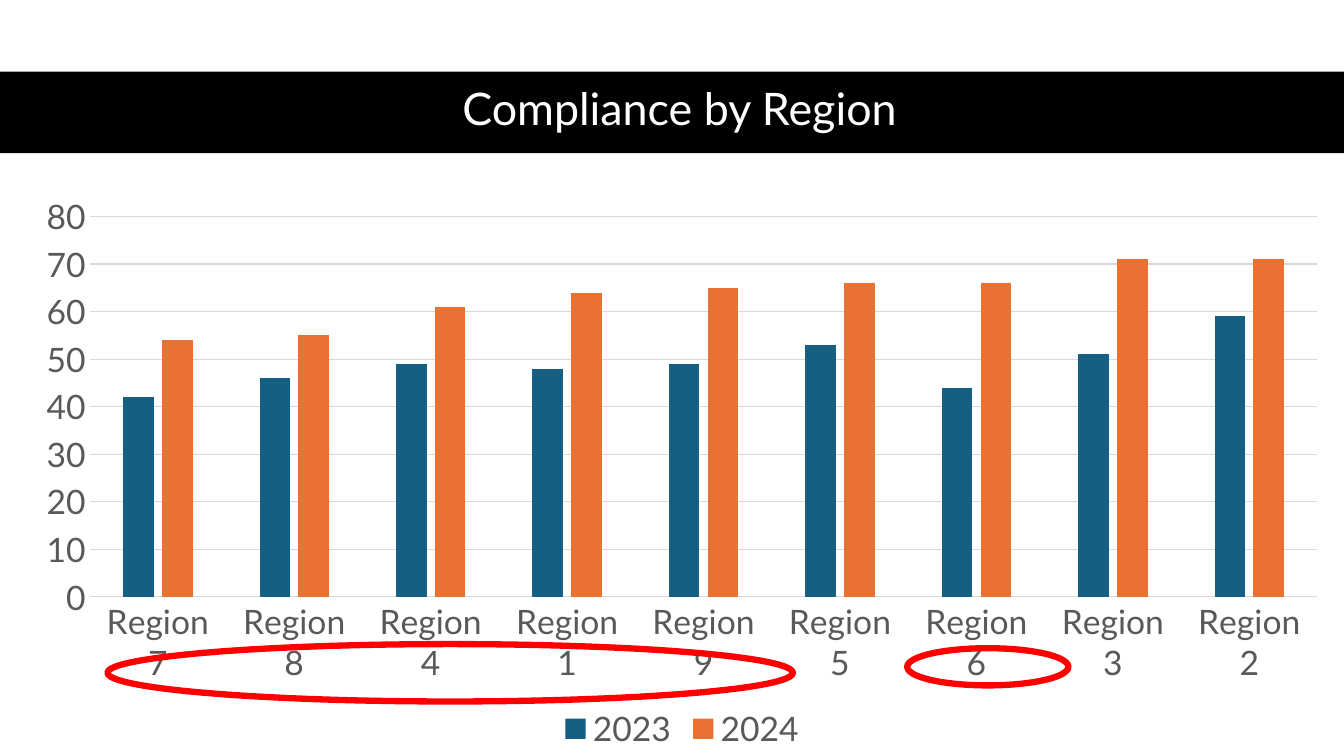
from pptx import Presentation
from pptx.chart.data import CategoryChartData
from pptx.dml.color import RGBColor
from pptx.enum.chart import XL_CHART_TYPE, XL_LEGEND_POSITION, XL_TICK_MARK
from pptx.enum.shapes import MSO_SHAPE
from pptx.enum.text import MSO_ANCHOR, MSO_AUTO_SIZE, PP_ALIGN
from pptx.util import Pt

COLUMNS = XL_CHART_TYPE.COLUMN_CLUSTERED
BOTTOM = XL_LEGEND_POSITION.BOTTOM
NO_TICK = XL_TICK_MARK.NONE
RECT, OVAL = MSO_SHAPE.RECTANGLE, MSO_SHAPE.OVAL
MIDDLE, CENTER = MSO_ANCHOR.MIDDLE, PP_ALIGN.CENTER
NO_FIT = MSO_AUTO_SIZE.NONE

BLACK = RGBColor(0x00, 0x00, 0x00)
WHITE = RGBColor(0xFF, 0xFF, 0xFF)
GREY = RGBColor(0x59, 0x59, 0x59)
GRID = RGBColor(0xD9, 0xD9, 0xD9)
BLUE = RGBColor(0x15, 0x60, 0x82)
ORANGE = RGBColor(0xE9, 0x71, 0x32)
RED = RGBColor(0xFF, 0x00, 0x00)

FONT = "Lato"
REGIONS = [7, 8, 4, 1, 9, 5, 6, 3, 2]
SERIES = {
    "2023": (BLUE, [42, 46, 49, 48, 49, 53, 44, 51, 59]),
    "2024": (ORANGE, [54, 55, 61, 64, 65, 66, 66, 71, 71]),
}
HIGHLIGHTS = [(62.4, 158.4, 489.6, 41), (633.6, 161.3, 115.2, 26.6)]


def set_attrs(obj, values):
    for name, value in values.items():
        setattr(obj, name, value)


def format_font(font, size, color):
    set_attrs(font, {"name": FONT, "size": Pt(size), "bold": False})
    font.color.rgb = color


def format_line(line, color, width):
    line.color.rgb = color
    line.width = Pt(width)


def add_header(s, x, y, w, h):
    bar = s.shapes.add_shape(RECT, Pt(x), Pt(y), Pt(w), Pt(h))
    bar.shadow.inherit = False
    bar.fill.solid()
    bar.fill.fore_color.rgb = BLACK
    bar.line.fill.background()
    title = s.shapes.title
    title._element.addprevious(bar._element)
    set_attrs(title, {"left": Pt(x + 44), "top": Pt(y - 0.7),
                      "width": Pt(w - 77), "height": Pt(h)})
    tf = title.text_frame
    set_attrs(tf, {"text": "Compliance by Region", "word_wrap": True,
                   "auto_size": NO_FIT, "vertical_anchor": MIDDLE})
    p = tf.paragraphs[0]
    set_attrs(p, {"alignment": CENTER, "line_spacing": 0.9})
    format_font(p.runs[0].font, 32, WHITE)


def add_compliance_chart(s, x, y, w, h):
    data = CategoryChartData()
    data.categories = [f"Region {number}" for number in REGIONS]
    for name, (_, values) in SERIES.items():
        data.add_series(name, values)
    chart = s.shapes.add_chart(COLUMNS, Pt(x), Pt(y), Pt(w), Pt(h), data).chart
    set_attrs(chart, {"has_title": False, "has_legend": True})
    format_font(chart.font, 24, BLACK)
    set_attrs(chart.legend, {"position": BOTTOM, "include_in_layout": False})
    format_font(chart.legend.font, 24, GREY)

    plot = chart.plots[0]
    set_attrs(plot, {"gap_width": 219, "overlap": -27, "vary_by_categories": False})
    for series, (color, _) in zip(plot.series, SERIES.values()):
        series.format.fill.solid()
        series.format.fill.fore_color.rgb = color

    cat_axis, val_axis = chart.category_axis, chart.value_axis
    for axis in (cat_axis, val_axis):
        set_attrs(axis, {"major_tick_mark": NO_TICK, "minor_tick_mark": NO_TICK})
        format_font(axis.tick_labels.font, 24, GREY)
    format_line(cat_axis.format.line, GRID, 0.75)
    set_attrs(val_axis, {"minimum_scale": 0, "maximum_scale": 80, "major_unit": 10,
                         "has_major_gridlines": True})
    val_axis.format.line.fill.background()
    format_line(val_axis.major_gridlines.format.line, GRID, 0.75)


def add_highlights(s, x, y):
    for dx, dy, w, h in HIGHLIGHTS:
        sp = s.shapes.add_shape(OVAL, Pt(x + dx), Pt(y + dy), Pt(w), Pt(h))
        sp.shadow.inherit = False
        sp.fill.background()
        format_line(sp.line, RED, 4.5)


def main():
    prs = Presentation()
    set_attrs(prs, {"slide_width": Pt(960), "slide_height": Pt(540)})
    s = prs.slides.add_slide(prs.slide_layouts[5])
    add_header(s, 0, 51.1, 960, 58.3)
    add_compliance_chart(s, 14.4, 131.8, 945.6, 408.2)
    add_highlights(s, 14.4, 301.7)
    prs.save("out.pptx")


if __name__ == "__main__":
    main()
